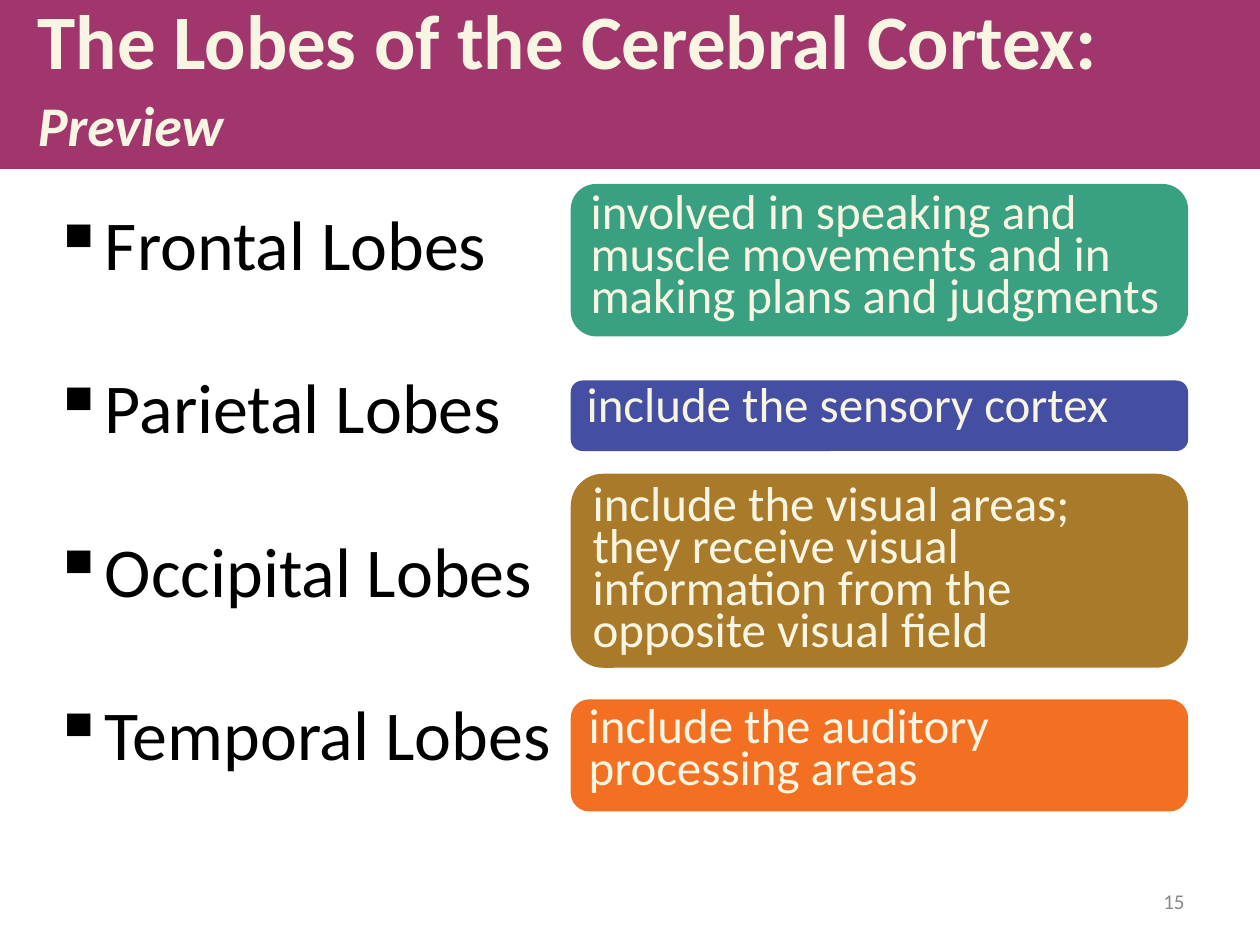
from lxml import etree
from pptx import Presentation
from pptx import util as u
from pptx.dml.color import RGBColor
from pptx.enum import shapes, text
from pptx.oxml.ns import qn

CREAM = "F8F6E3"


def paint(color_format, color):
    color_format.rgb = RGBColor.from_string(color)


def write(frame, runs, size=28, color=CREAM, bold=False, align="LEFT", spacing=None,
          before=0, after=0, bullet=None, anchor="TOP", new=False):
    """Write one paragraph; runs is a string or a list of (text, size, italic)."""
    frame.word_wrap = True
    frame.vertical_anchor = text.MSO_ANCHOR[anchor]
    paragraph = frame.add_paragraph() if new else frame.paragraphs[0]
    paragraph.alignment = text.PP_ALIGN[align]
    paragraph.line_spacing = spacing
    paragraph.space_before, paragraph.space_after = u.Pt(before), u.Pt(after)
    if bullet:
        properties = paragraph._p.get_or_add_pPr()
        properties.set("marL", str(u.Inches(0.38)))
        properties.set("indent", str(-u.Inches(0.38)))
        etree.SubElement(properties, qn("a:buChar")).set("char", bullet)
    for words, points, italic in [(runs, size, False)] if isinstance(runs, str) else runs:
        run = paragraph.add_run()
        run.text = words
        run.font.name, run.font.size = "Calibri", u.Pt(points)
        run.font.bold, run.font.italic = bold, italic
        paint(run.font.color, color)


deck = Presentation()
deck.slide_width, deck.slide_height = u.Inches(10), u.Inches(7.5)
slide = deck.slides.add_slide(deck.slide_layouts[6])

# Title band, then one description panel per lobe
column_left, column_width = 4.53, 4.9
panels = [
    ("RECTANGLE", 0, 0, 10, 1.34, "A0366C"),
    ("ROUNDED_RECTANGLE", column_left, 1.46, column_width, 1.21, "3AA082"),
    ("ROUNDED_RECTANGLE", column_left, 3.02, column_width, 0.56, "444EA2"),
    ("ROUNDED_RECTANGLE", column_left, 3.76, column_width, 1.54, "AA7A2B"),
    ("ROUNDED_RECTANGLE", column_left, 5.55, column_width, 0.89, "F36F21"),
]
frames = []
for outline, left, top, width, height, fill in panels:
    panel = slide.shapes.add_shape(shapes.MSO_SHAPE[outline], u.Inches(left), u.Inches(top),
                                   u.Inches(width), u.Inches(height))
    panel.shadow.inherit = False
    panel.fill.solid()
    paint(panel.fill.fore_color, fill)
    panel.line.fill.background()
    frames.append(panel.text_frame)

title, *descriptions = frames
title.margin_left = u.Inches(0.3)
write(title, [("The Lobes of the Cerebral Cortex: ", 44, False), ("Preview", 32, True)],
      bold=True, spacing=u.Pt(42), anchor="MIDDLE")

# Lobe names on the left, what each one does on the right
names = slide.shapes.add_textbox(u.Inches(0.32), u.Inches(1.62),
                                 u.Inches(4.69), u.Inches(4.95)).text_frame
lobes = [
    ("Frontal Lobes", 0,
     "involved in speaking and muscle movements and in making plans and judgments"),
    ("Parietal Lobes", 0, "include the sensory cortex"),
    ("Occipital Lobes", 5.6,
     "include the visual areas; they receive visual information from the opposite visual field"),
    ("Temporal Lobes", 5.6, "include the auditory processing areas"),
]
for row, (lobe, before, role) in enumerate(lobes):
    write(names, lobe, size=40, color="000000", spacing=0.9, before=8, after=42,
          bullet="▪", new=row > 0)
    write(descriptions[row], role, spacing=u.Pt(24), before=before)

# Slide number
number = slide.shapes.add_textbox(u.Inches(7.17), u.Inches(6.95), u.Inches(2.33), u.Inches(0.4))
write(number.text_frame, "15", size=12, color="898989", align="RIGHT", anchor="MIDDLE")

deck.save("out.pptx")
